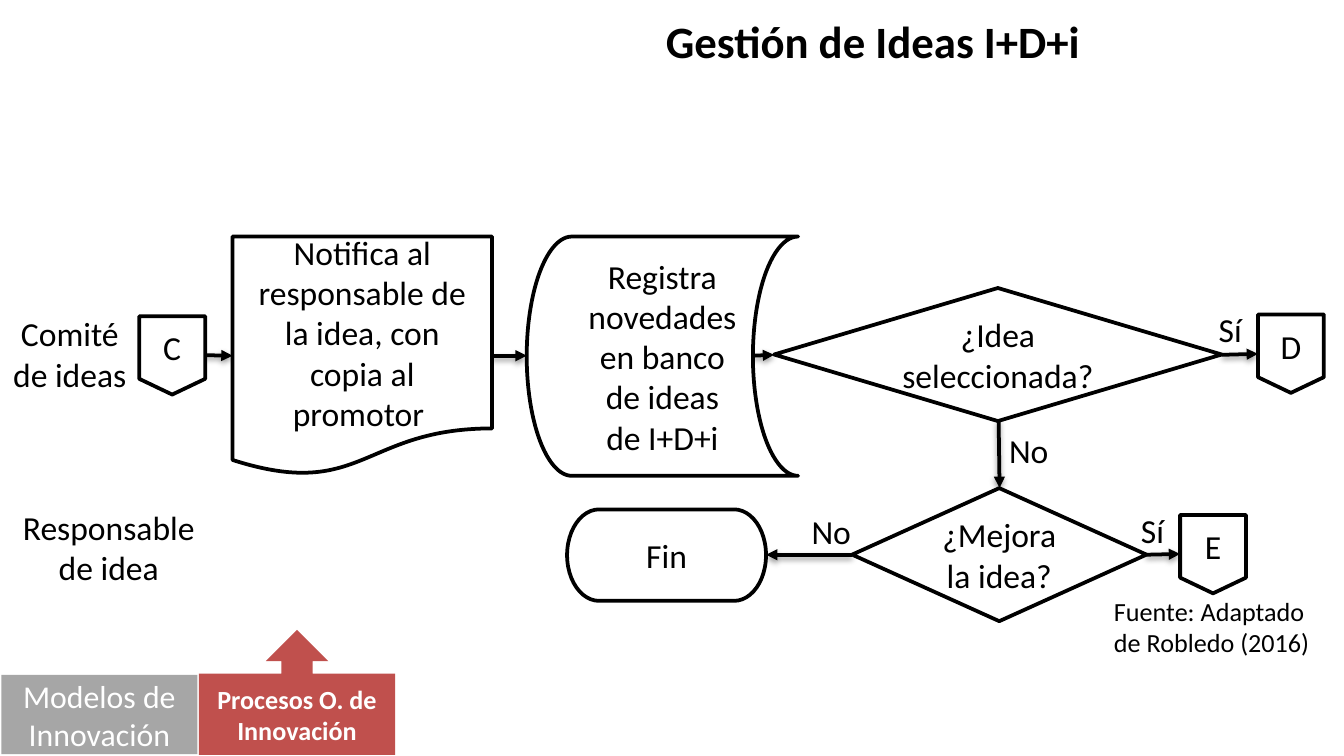
from lxml import etree
from pptx import Presentation
from pptx.dml.color import RGBColor
from pptx.enum.shapes import MSO_CONNECTOR, MSO_SHAPE
from pptx.enum.text import MSO_ANCHOR, MSO_AUTO_SIZE, PP_ALIGN
from pptx.oxml import parse_xml
from pptx.oxml.ns import nsdecls, qn
from pptx.util import Pt

BLACK = RGBColor(0x00, 0x00, 0x00)
WHITE = RGBColor(0xFF, 0xFF, 0xFF)
GRAY = RGBColor(0xA6, 0xA6, 0xA6)
RED = RGBColor(0xC0, 0x50, 0x4D)

STRAIGHT = MSO_CONNECTOR.STRAIGHT
OFFPAGE = MSO_SHAPE.FLOWCHART_OFFPAGE_CONNECTOR
DOCUMENT = MSO_SHAPE.FLOWCHART_DOCUMENT
STORAGE = MSO_SHAPE.FLOWCHART_STORED_DATA
DECISION = MSO_SHAPE.FLOWCHART_DECISION
TERMINATOR = MSO_SHAPE.FLOWCHART_TERMINATOR
RECTANGLE = MSO_SHAPE.RECTANGLE
ARROW_CALLOUT = MSO_SHAPE.UP_ARROW_CALLOUT
MIDDLE = MSO_ANCHOR.MIDDLE
GROW = MSO_AUTO_SIZE.SHAPE_TO_FIT_TEXT
LEFT, CENTER = PP_ALIGN.LEFT, PP_ALIGN.CENTER

FONT = "Calibri"
LINE_WIDTH = 2
SHADOW = (
    f'<a:effectLst {nsdecls("a")}>'
    '<a:outerShdw blurRad="39370" dist="20320" dir="5400000" rotWithShape="0">'
    '<a:srgbClr val="000000"><a:alpha val="38000"/></a:srgbClr>'
    '</a:outerShdw></a:effectLst>'
)


def write(frame, text, size, color, align=CENTER, bold=False):
    frame.text = text
    paragraph = frame.paragraphs[0]
    paragraph.alignment = align
    font = paragraph.runs[0].font
    font.name = FONT
    font.size = Pt(size)
    font.bold = bold
    font.color.rgb = color


def add_label(slide, text, left, top, width, height, size=18,
              align=CENTER, bold=False, wrap=True):
    label = slide.shapes.add_textbox(Pt(left), Pt(top), Pt(width), Pt(height))
    frame = label.text_frame
    frame.word_wrap = wrap
    frame.auto_size = GROW
    write(frame, text, size, BLACK, align, bold)


def add_block(slide, kind, text, left, top, width, height, fill,
              color, size, bold=False):
    block = slide.shapes.add_shape(kind, Pt(left), Pt(top), Pt(width), Pt(height))
    block.shadow.inherit = False
    block.fill.solid()
    block.fill.fore_color.rgb = fill
    block.line.fill.background()
    block.text_frame.word_wrap = True
    block.text_frame.vertical_anchor = MIDDLE
    write(block.text_frame, text, size, color, bold=bold)
    return block


def add_step(slide, kind, text, left, top, width, height):
    step = add_block(slide, kind, text, left, top, width, height, WHITE, BLACK, 18)
    step.line.color.rgb = BLACK
    step.line.width = Pt(LINE_WIDTH)


def add_arrow(slide, x1, y1, x2, y2):
    arrow = slide.shapes.add_connector(STRAIGHT, Pt(x1), Pt(y1), Pt(x2), Pt(y2))
    arrow.line.color.rgb = BLACK
    arrow.line.width = Pt(LINE_WIDTH)
    outline = arrow.line._get_or_add_ln()
    etree.SubElement(outline, qn("a:tailEnd"), type="triangle")
    outline.addnext(parse_xml(SHADOW))


def main():
    deck = Presentation()
    deck.slide_width, deck.slide_height = Pt(720), Pt(405)
    slide = deck.slides.add_slide(deck.slide_layouts[6])

    add_label(slide, "Gestión de Ideas I+D+i", 215.3, 3.6, 504.7, 36, 24, bold=True)
    add_label(slide, "Comité de ideas", -3.6, 164.2, 82, 51)
    add_label(slide, "Responsable de idea", 0.7, 267.8, 115.2, 51)
    add_label(slide, "Fuente: Adaptado de Robledo (2016)",
              589.7, 315.4, 131, 41, 14, LEFT)

    arrows = [
        (109.6, 190.3, 124.6, 190.6),
        (263.5, 190.6, 282.2, 190.6),
        (403.2, 190.6, 414.7, 190.1),
        (654.5, 190.1, 673.9, 189.6),
        (535, 225.4, 535.5, 261.4),
        (614.2, 297.2, 632.2, 296.8),
        (456.5, 297.2, 410.4, 297.2),
    ]
    for ends in arrows:
        add_arrow(slide, *ends)

    steps = [
        (OFFPAGE, "C", 74.6, 169.4, 35.3, 42),
        (DOCUMENT, "Notifica al responsable de la idea, con copia al promotor ",
         124.6, 126.7, 139, 128.2),
        (STORAGE, "Registra novedades en banco de ideas de I+D+i",
         282.2, 126.7, 145.4, 128.2),
        (DECISION, "¿Idea seleccionada?", 414.7, 154.3, 239.8, 71.3),
        (OFFPAGE, "D", 673.9, 168.5, 35.3, 42),
        (DECISION, "¿Mejora la idea?", 456.5, 261.5, 157.7, 71.3),
        (OFFPAGE, "E", 632.2, 275.9, 35.3, 42),
        (TERMINATOR, "Fin", 303.8, 272.9, 106.6, 49),
    ]
    for step in steps:
        add_step(slide, *step)

    answers = [
        ("Sí", 645.8, 162.2, 27.4),
        ("No", 533.5, 227, 36),
        ("Sí", 604.1, 269.5, 27.4),
        ("No", 427.7, 270, 36),
    ]
    for text, left, top, width in answers:
        add_label(slide, text, left, top, width, 28.8, align=LEFT, wrap=False)

    add_block(slide, RECTANGLE, "Modelos de Innovación",
              0.7, 361.6, 105.1, 42.5, GRAY, WHITE, 17)
    add_block(slide, ARROW_CALLOUT, "Procesos O. de Innovación",
              106.6, 337.5, 105.1, 67, RED, WHITE, 14, bold=True)

    deck.save("out.pptx")


if __name__ == "__main__":
    main()
